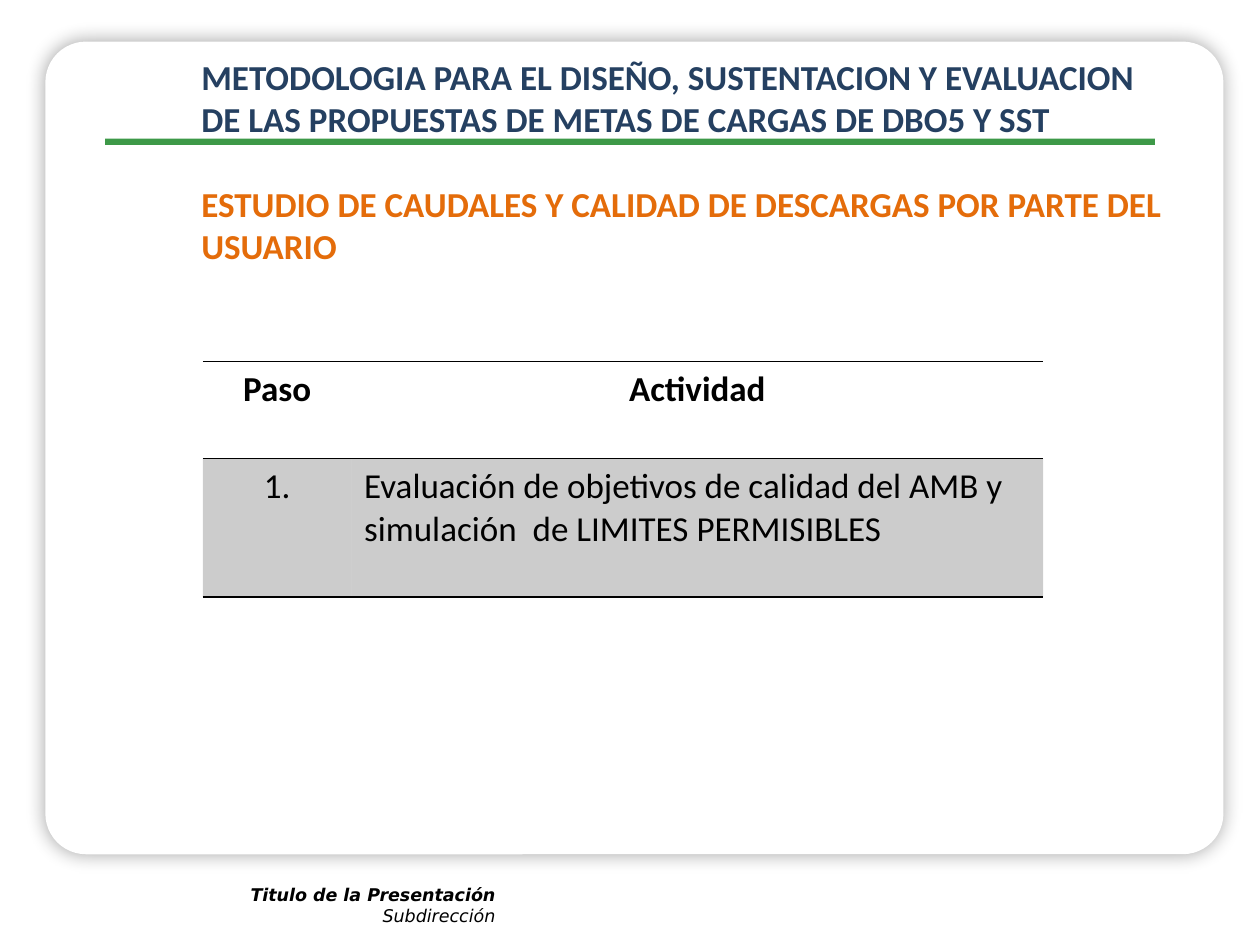
import pptx
import pptx.dml.color
import pptx.enum.shapes
import pptx.enum.text
import pptx.oxml
import pptx.oxml.ns
import pptx.util

WIDE, HIGH = 10, 7.5
BLACK, WHITE, GREEN, NAVY, ORANGE = "000000", "FFFFFF", "3D9948", "254061", "E46C0A"
NS = pptx.oxml.ns.nsdecls("a")
ALIGN = pptx.enum.text.PP_ALIGN
SHAPE = pptx.enum.shapes.MSO_SHAPE


def color(code):
    return pptx.dml.color.RGBColor.from_string(code)


def place(x, y, w, h):
    return [pptx.util.Inches(n) for n in (x, y, w, h)]


def paint(fill, code):
    fill.solid()
    fill.fore_color.rgb = color(code)


def style(par, size, face, code, bold=False, slant=False, align=ALIGN.LEFT):
    par.alignment = align
    font = par.font
    font.size, font.name = pptx.util.Pt(size), face
    font.bold, font.italic = bold, slant
    font.color.rgb = color(code)


def add_block(slide, kind, box, code):
    block = slide.shapes.add_shape(kind, *place(*box))
    block.shadow.inherit = False
    paint(block.fill, code)
    block.line.fill.background()
    return block


def add_glow(block):
    """Put a soft, centred shadow round a block."""
    block._element.spPr.find(pptx.oxml.ns.qn("a:effectLst")).append(pptx.oxml.parse_xml(
        f'<a:outerShdw {NS} blurRad="{pptx.util.Pt(10.8)}" dist="0" dir="5400000" '
        f'algn="ctr" rotWithShape="0"><a:srgbClr val="{BLACK}">'
        '<a:alpha val="35000"/></a:srgbClr></a:outerShdw>'))


def add_text(slide, box, lines, gap=0):
    """Each line is its text and a dict of style settings."""
    frame = slide.shapes.add_textbox(*place(*box)).text_frame
    frame.word_wrap = True
    for i, (text, look) in enumerate(lines):
        par = frame.add_paragraph() if i else frame.paragraphs[0]
        par.text = text
        style(par, **look)
        if i and gap:
            par.space_before = pptx.util.Pt(gap)
    return frame


def set_edges(cell, drawn):
    """Draw the named sides of a cell and clear the others."""
    props = cell._tc.get_or_add_tcPr()
    for i, side in enumerate("LRTB"):
        ink = f'<a:solidFill><a:srgbClr val="{BLACK}"/></a:solidFill>' if side in drawn else "<a:noFill/>"
        props.insert(i, pptx.oxml.parse_xml(f'<a:ln{side} {NS} w="12700">{ink}</a:ln{side}>'))


def add_steps(slide, x, y, cols, rows, data):
    table = slide.shapes.add_table(
        len(rows), len(cols), *place(x, y, sum(cols), sum(rows))).table
    table.horz_banding = False
    for col, wide in zip(table.columns, cols):
        col.width = pptx.util.Inches(wide)
    for r, row in enumerate(table.rows):
        row.height = pptx.util.Inches(rows[r])
        for c, cell in enumerate(row.cells):
            cell.text = data[r][c]
            align = ALIGN.LEFT if r and c else ALIGN.CENTER
            style(cell.text_frame.paragraphs[0], 20, "Calibri", BLACK, bold=r == 0, align=align)
            if r:
                paint(cell.fill, BLACK)
                tint = cell._tc.tcPr.find(".//" + pptx.oxml.ns.qn("a:srgbClr"))
                tint.append(pptx.oxml.parse_xml(f'<a:alpha {NS} val="20000"/>'))
            else:
                cell.fill.background()
            set_edges(cell, "TB")


def main():
    deck = pptx.Presentation()
    deck.slide_width, deck.slide_height = pptx.util.Inches(WIDE), pptx.util.Inches(HIGH)
    slide = deck.slides.add_slide(deck.slide_layouts[6])

    # Card and rule
    card = add_block(slide, SHAPE.ROUNDED_RECTANGLE, (0.36, 0.33, 9.35, 6.45), WHITE)
    card.adjustments[0] = 0.05
    add_glow(card)
    add_block(slide, SHAPE.RECTANGLE, (WIDE / 12, 1.1, WIDE * 10 / 12, 0.05), GREEN)

    # Footer
    foot = dict(size=10, face="DejaVu Sans", code=BLACK, slant=True, align=ALIGN.RIGHT)
    note = add_text(slide, (0.8, 6.97, 3.23, 0.44), [
        ("Titulo de la Presentación", dict(foot, bold=True)),
        ("Subdirección", foot)])
    note.auto_size = pptx.enum.text.MSO_AUTO_SIZE.SHAPE_TO_FIT_TEXT

    # Steps
    add_steps(slide, 1.61, 2.87, (1.18, 5.49), (0.77, 1.1), [
        ("Paso", "Actividad"),
        ("1.", "Evaluación de objetivos de calidad del AMB y simulación  de LIMITES PERMISIBLES")])

    # Headings
    head = dict(size=20, face="Calibri", bold=True)
    add_text(slide, (1.5, 0.39, 7.9, 1.76), [
        ("METODOLOGIA PARA EL DISEÑO, SUSTENTACION Y EVALUACION "
         "DE LAS PROPUESTAS DE METAS DE CARGAS DE DBO5 Y SST", dict(head, code=NAVY)),
        ("ESTUDIO DE CAUDALES Y CALIDAD DE DESCARGAS POR PARTE DEL USUARIO",
         dict(head, code=ORANGE))], gap=24.4)

    deck.save("out.pptx")


if __name__ == "__main__":
    main()
